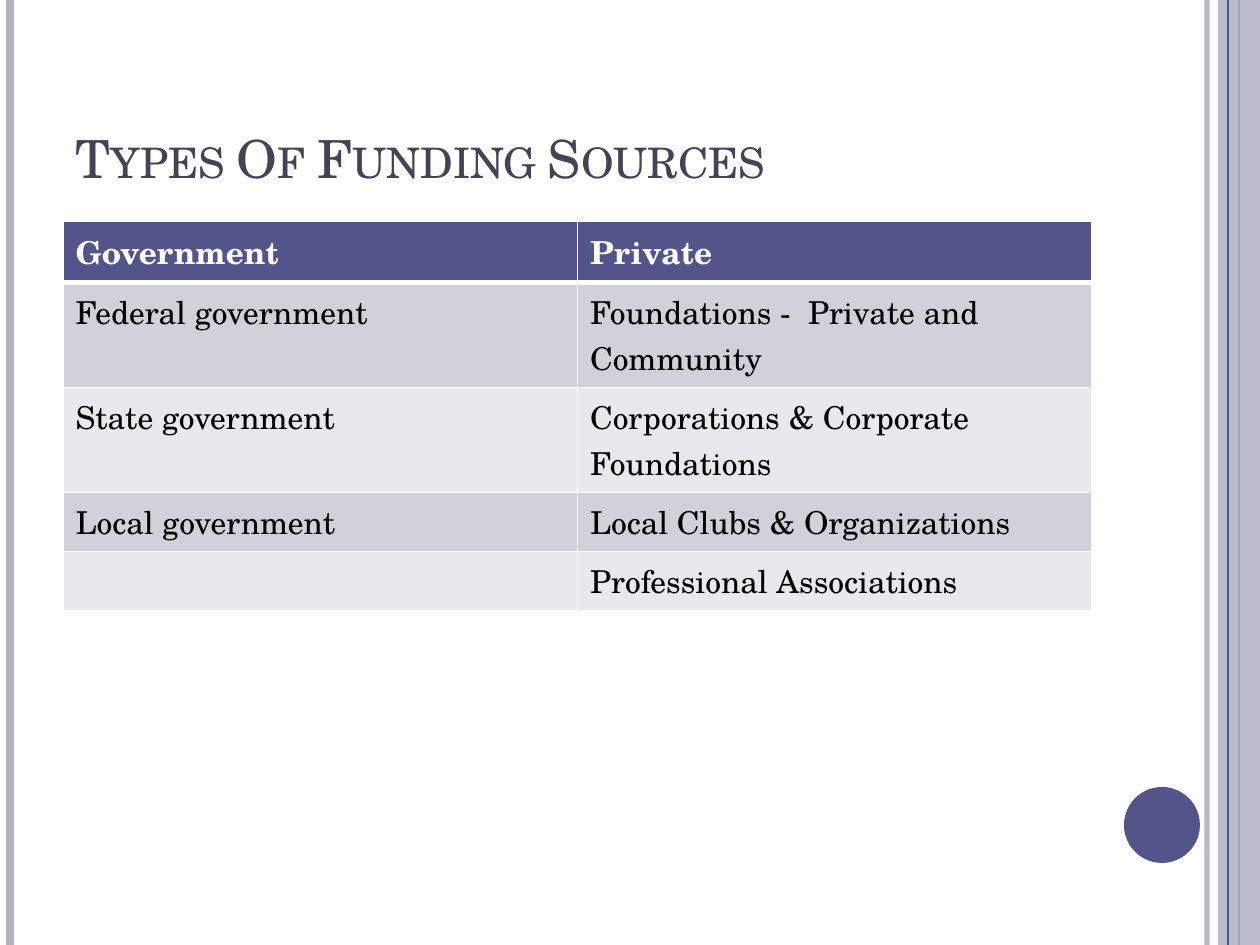
from dataclasses import dataclass

from lxml.etree import SubElement
from pptx import Presentation
from pptx.dml.color import RGBColor
from pptx.enum.shapes import MSO_CONNECTOR, MSO_SHAPE
from pptx.enum.text import MSO_ANCHOR, MSO_AUTO_SIZE, PP_ALIGN
from pptx.oxml.ns import qn
from pptx.util import Emu, Inches, Pt

PX_PER_INCH = 126
SLIDE_WIDTH, SLIDE_HEIGHT = 1260, 945
ROWS = [
    ("Government", "Private"),
    ("Federal government", "Foundations -  Private and Community"),
    ("State government", "Corporations & Corporate Foundations"),
    ("Local government", "Local Clubs & Organizations"),
    ("", "Professional Associations"),
]


@dataclass(frozen=True)
class Theme:
    font: str = "TeX Gyre Schola"
    title_size: int = 30
    body_size: int = 18
    title: str = "424456"
    text: str = "000000"
    white: str = "FFFFFF"
    accent: str = "53548A"
    stripe: str = "B3B4C4"
    bands: tuple = ("E9E9ED", "D1D1DA")


def px(length):
    return Emu(round(length * Inches(1) / PX_PER_INCH))


def paint(fill, color, opacity=100):
    fill.solid()
    fill.fore_color.rgb = RGBColor.from_string(color)
    if opacity < 100:
        color_node = fill._xPr.find(f".//{qn('a:srgbClr')}")
        SubElement(color_node, qn("a:alpha"), val=str(opacity * 1000))


class SlideBuilder:
    def __init__(self, slide, theme):
        self.slide = slide
        self.theme = theme

    def style(self, paragraph, size, color, bold=False):
        font = paragraph.font
        font.name, font.size, font.bold = self.theme.font, Pt(size), bold
        font.color.rgb = RGBColor.from_string(color)

    def vertical_line(self, x, color, width, opacity=100):
        line = self.slide.shapes.add_connector(
            MSO_CONNECTOR.STRAIGHT, px(x), 0, px(x), px(SLIDE_HEIGHT))
        line.line.width = Pt(width)
        paint(line.line.fill, color, opacity)
        SubElement(line._element.spPr, qn("a:effectLst"))

    def shape(self, kind, left, top, width, height, color, opacity=100):
        shape = self.slide.shapes.add_shape(
            kind, px(left), px(top), px(width), px(height))
        shape.shadow.inherit = False
        shape.line.fill.background()
        paint(shape.fill, color, opacity)

    def title(self, text, left, top, width, height):
        """Fill the title placeholder, set in small capitals."""
        box = self.slide.shapes.title
        box.left, box.top, box.width, box.height = map(px, (left, top, width, height))
        frame = box.text_frame
        frame.text = text
        frame.word_wrap = True
        frame.auto_size = MSO_AUTO_SIZE.NONE
        frame.vertical_anchor = MSO_ANCHOR.BOTTOM
        para = frame.paragraphs[0]
        para.alignment = PP_ALIGN.LEFT
        self.style(para, self.theme.title_size, self.theme.title)
        para.runs[0]._r.get_or_add_rPr().set("cap", "small")

    def borders(self, cell, top, bottom):
        widths = {"a:lnL": 1, "a:lnR": 1, "a:lnT": top, "a:lnB": bottom}
        for tag, width in widths.items():
            edge = SubElement(cell._tc.get_or_add_tcPr(), qn(tag), w=str(Pt(width)))
            fill = SubElement(edge, qn("a:solidFill"))
            SubElement(fill, qn("a:srgbClr"), val=self.theme.white)

    def table(self, rows, left, top, width, row_height):
        """Add a table with a header row and banded body rows."""
        theme = self.theme
        table = self.slide.shapes.add_table(
            len(rows), len(rows[0]), px(left), px(top),
            px(width), px(row_height * len(rows))).table
        for row_index, row in enumerate(rows):
            header = row_index == 0
            for column_index, text in enumerate(row):
                cell = table.cell(row_index, column_index)
                cell.text = text
                self.style(cell.text_frame.paragraphs[0], theme.body_size,
                           theme.white if header else theme.text, header)
                self.borders(cell, top=3 if row_index == 1 else 1,
                             bottom=3 if header else 1)
                paint(cell.fill, theme.accent if header else theme.bands[row_index % 2])


def main():
    deck = Presentation()
    deck.slide_width, deck.slide_height = px(SLIDE_WIDTH), px(SLIDE_HEIGHT)
    theme = Theme()
    page = SlideBuilder(deck.slides.add_slide(deck.slide_layouts[5]), theme)

    page.vertical_line(1207, theme.stripe, 3, opacity=93)
    page.vertical_line(10, theme.stripe, 4.5)
    page.vertical_line(1239, theme.accent, 1.5)
    page.shape(MSO_SHAPE.RECTANGLE, 1218, 0, 42, SLIDE_HEIGHT, theme.stripe, opacity=87)
    page.vertical_line(1228, theme.accent, 0.75)
    page.shape(MSO_SHAPE.OVAL, 1124, 787, 76, 76, theme.accent)

    page.title("Types Of Funding Sources", 63, 38, 1029, 157)
    page.table(ROWS, 63, 221, 1029, 52)
    deck.save("out.pptx")


if __name__ == "__main__":
    main()
